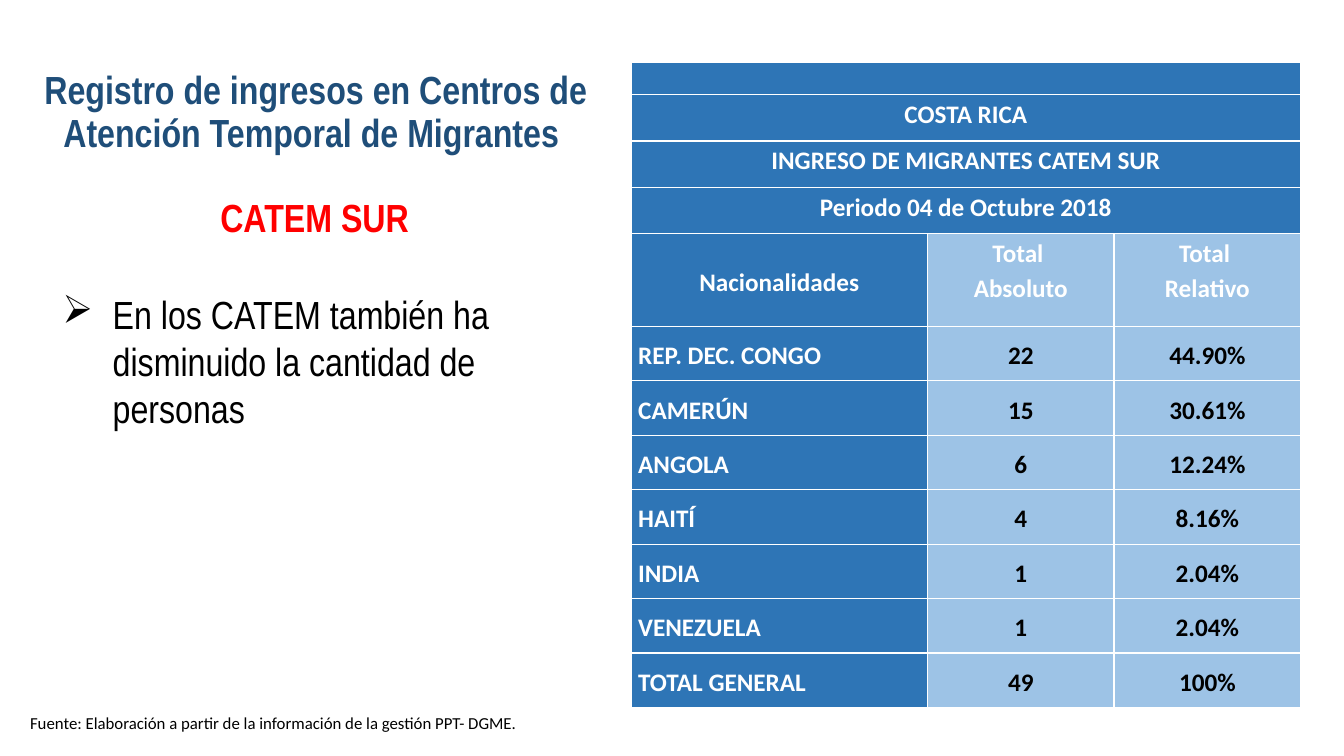
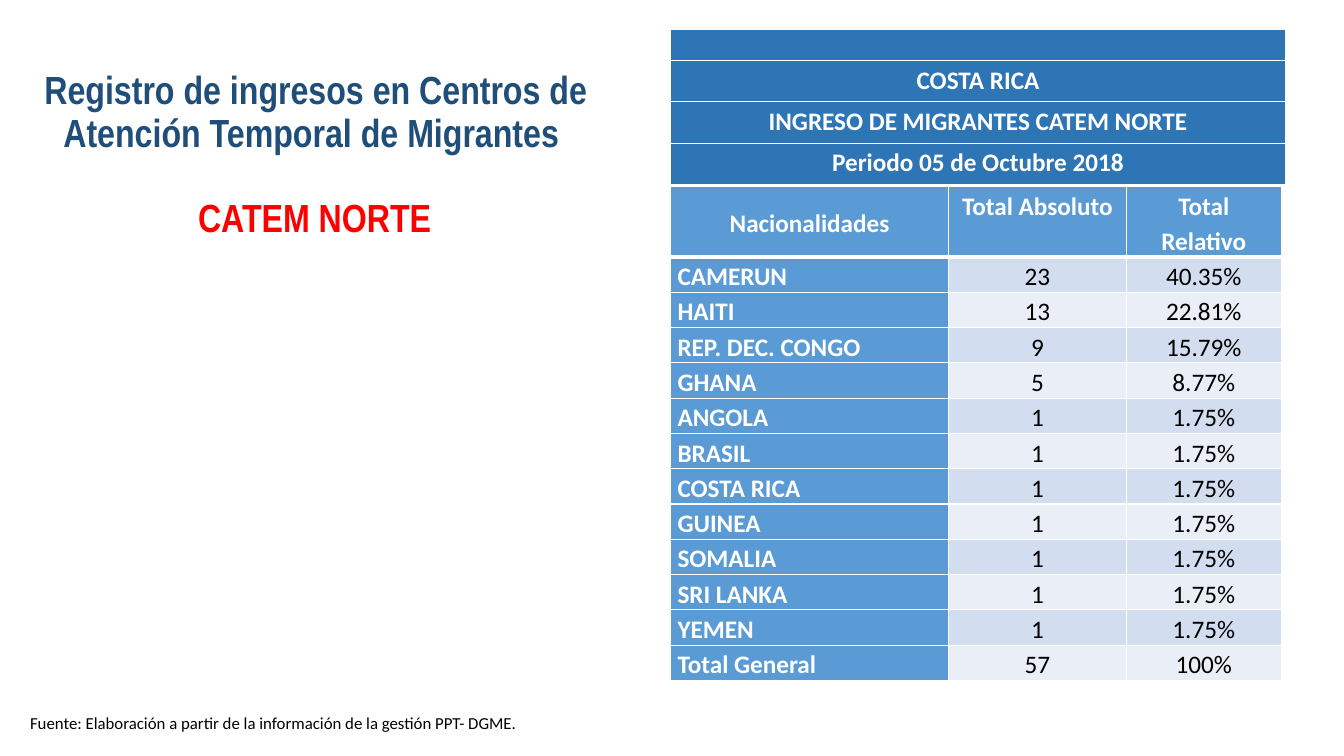
from lxml import etree
from pptx import Presentation
from pptx.dml.color import RGBColor
from pptx.enum.text import MSO_ANCHOR as ANCHOR, PP_ALIGN as ALIGN
from pptx.oxml.ns import qn
from pptx.util import Inches, Pt

WHITE, BLACK, RED, NAVY = "FFFFFF", "000000", "FF0000", "1F4E79"
DEEP, SKY, BLUE, PALE, PALER = "2E75B6", "9DC3E6", "5B9BD5", "D2DEEF", "EAEFF7"
TITLE = "Registro de ingresos en Centros de Atención Temporal de Migrantes "
SOURCE = "Fuente: Elaboración a partir de la información de la gestión PPT- DGME."


def rgb(color):
    return RGBColor.from_string(color)


class Deck:
    """Holds the shared style and the current slide."""

    narrow, plain = "Arial Narrow", "Calibri"

    def __init__(self):
        self.prs = Presentation()
        self.prs.slide_width, self.prs.slide_height = Inches(13.33), Inches(7.5)

    def slide(self, center):
        self.s = self.prs.slides.add_slide(self.prs.slide_layouts[6])
        heading = {"size": Pt(28), "name": self.narrow, "bold": True}
        centered = {"alignment": ALIGN.CENTER, "line_spacing": 0.9}
        self.text((0.2, 0.4, 5.86, 1.45), TITLE, heading, NAVY, centered, ANCHOR.MIDDLE)
        self.text((0.85, 1.85, 4.54, 0.66), center, heading, RED, centered, ANCHOR.MIDDLE)
        self.text((0.2, 7.02, 9.97, 0.3), SOURCE, {"size": Pt(12), "name": self.plain}, BLACK)

    def run(self, p, text, font, color, layout):
        r = p.add_run()
        r.text = text
        for target, values in ((r.font, font), (p, layout)):
            for name, value in values.items():
                setattr(target, name, value)
        r.font.color.rgb = rgb(color)

    def text(self, at, text, font, color, layout={}, anchor=ANCHOR.TOP):
        tf = self.s.shapes.add_textbox(*map(Inches, at)).text_frame
        tf.word_wrap, tf.vertical_anchor = True, anchor
        p = tf.paragraphs[0]
        self.run(p, text, font, color, layout)
        return p

    def bullet(self, at, text):
        p = self.text(at, text, {"size": Pt(28), "name": self.narrow}, BLACK)
        pPr = p._p.get_or_add_pPr()
        pPr.set("marL", str(Inches(0.5)))
        pPr.set("indent", str(-Inches(0.5)))
        etree.SubElement(pPr, qn("a:buChar"), char="➢")

    def table(self, left, top, cols, heights):
        sp = self.s.shapes.add_table(len(heights), len(cols), Inches(left), Inches(top),
                                     Inches(sum(cols)), Inches(sum(heights)))
        table = sp.table
        table.first_row = table.horz_banding = False
        for items, attr, sizes in ((table.columns, "width", cols),
                                   (table.rows, "height", heights)):
            for item, size in zip(items, sizes):
                setattr(item, attr, Inches(size))
        return table

    def cell(self, cell, text, fill, color=WHITE, bold=True, align=ALIGN.CENTER,
             anchor=ANCHOR.MIDDLE, above=1, below=1):
        tcPr = cell._tc.get_or_add_tcPr()
        for side, width in zip("LRTB", (1, 1, above, below)):
            ln = etree.SubElement(tcPr, qn(f"a:ln{side}"), w=str(Pt(width)))
            solid = etree.SubElement(ln, qn("a:solidFill"))
            etree.SubElement(solid, qn("a:srgbClr"), val=WHITE)
        cell.fill.solid()
        cell.fill.fore_color.rgb = rgb(fill)
        cell.margin_left = cell.margin_right = Inches(0.07)
        cell.margin_top = cell.margin_bottom = 0
        cell.vertical_anchor = anchor
        font = {"size": Pt(18), "name": self.plain, "bold": bold}
        layout = {"alignment": align, "line_spacing": 1.15}
        tf = cell.text_frame
        for i, line in enumerate(text.split("\n") if text else []):
            p = tf.add_paragraph() if i else tf.paragraphs[0]
            self.run(p, line, font, color, layout)
        if not text:
            etree.SubElement(tf.paragraphs[0]._p, qn("a:endParaRPr"), sz="1200")

    def banner(self, table, lines):
        for i, line in enumerate(lines):
            table.cell(i, 0).merge(table.cell(i, 2))
            for j in range(3):
                self.cell(table.cell(i, j), "" if j else line, DEEP, anchor=ANCHOR.TOP)

    def data(self, table, first, heads, rows, label, head, bands, bold, rule):
        for j, text in enumerate(heads):
            self.cell(table.cell(first, j), text, head if j else label, below=rule,
                      anchor=ANCHOR.TOP if j else ANCHOR.MIDDLE)
        for i, row in enumerate(rows):
            above = 1 if i else rule
            for j, text in enumerate(row):
                cell = table.cell(first + 1 + i, j)
                if j:
                    self.cell(cell, text, bands[i % len(bands)], BLACK, bold, above=above)
                else:
                    self.cell(cell, text, label, align=ALIGN.LEFT, above=above)


def banner_lines(center, day):
    return ["", "COSTA RICA", f"INGRESO DE MIGRANTES {center}", f"Periodo {day} de Octubre 2018"]


def main():
    south = [("REP. DEC. CONGO", "22", "44.90%"), ("CAMERÚN", "15", "30.61%"),
             ("ANGOLA", "6", "12.24%"), ("HAITÍ", "4", "8.16%"), ("INDIA", "1", "2.04%"),
             ("VENEZUELA", "1", "2.04%"), ("TOTAL GENERAL", "49", "100%")]
    singles = ("ANGOLA", "BRASIL", "COSTA RICA", "GUINEA", "SOMALIA", "SRI LANKA", "YEMEN")
    north = [("CAMERUN", "23", "40.35%"), ("HAITI", "13", "22.81%"),
             ("REP. DEC. CONGO", "9", "15.79%"), ("GHANA", "5", "8.77%"),
             *((country, "1", "1.75%") for country in singles),
             ("Total General", "57", "100%")]
    deck = Deck()

    deck.slide("CATEM SUR")
    table = deck.table(6.26, 0.62, (2.94, 1.85, 1.85),
                       [0.32] + [0.46] * 3 + [0.92] + [0.54] * len(south))
    deck.banner(table, banner_lines("CATEM SUR", "04"))
    deck.data(table, 4, ("Nacionalidades", "Total \nAbsoluto", "Total \nRelativo"), south,
              label=DEEP, head=SKY, bands=(SKY,), bold=True, rule=1)
    deck.bullet((0.52, 2.83, 5.54, 1.82),
                "En los CATEM también ha disminuido la cantidad de personas")

    deck.slide("CATEM NORTE")
    table = deck.table(6.65, 1.85, (2.76, 1.76, 1.54), [0.7] + [0.35] * len(north))
    deck.data(table, 0, ("Nacionalidades", "Total Absoluto", "Total Relativo"), north,
              label=BLUE, head=BLUE, bands=(PALE, PALER), bold=False, rule=3)
    table = deck.table(6.65, 0.29, (2.7, 1.7, 1.7), [0.31] + [0.41] * 3)
    deck.banner(table, banner_lines("CATEM NORTE", "05"))

    deck.prs.save("out.pptx")


if __name__ == "__main__":
    main()
